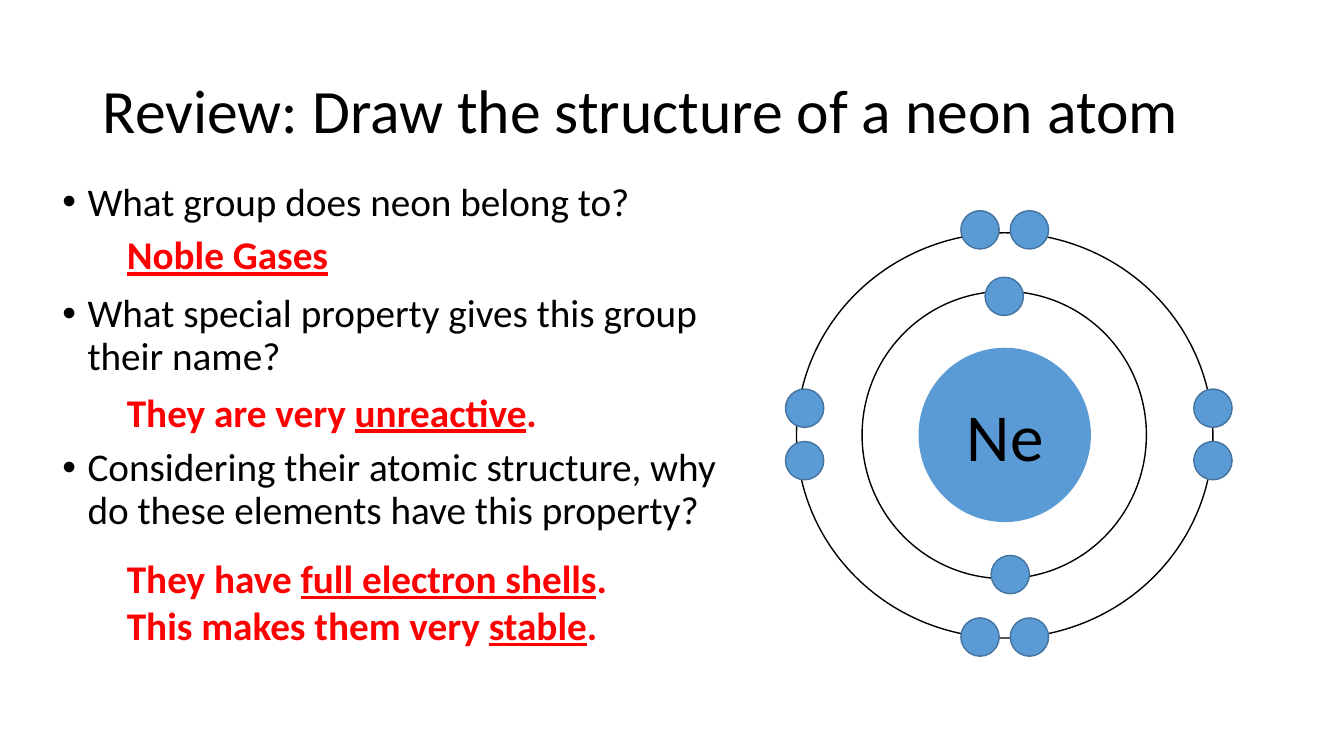
from itertools import product

from lxml.etree import SubElement
from pptx import Presentation
from pptx.dml.color import RGBColor
from pptx.enum.shapes import MSO_SHAPE
from pptx.enum.text import MSO_ANCHOR
from pptx.oxml.ns import qn
from pptx.util import Inches, Pt

BLACK = RGBColor(0x00, 0x00, 0x00)
RED = RGBColor(0xFF, 0x00, 0x00)
BLUE = RGBColor(0x5B, 0x9B, 0xD5)
DARK_BLUE = RGBColor(0x43, 0x73, 0x9E)

ELECTRON = 0.38
QUESTIONS = [
    "What group does neon belong to?",
    "What special property gives this group their name?",
    "Considering their atomic structure, why do these elements have this property?",
]
ANSWERS = [
    (2.24, 4.28, 0.57, "_Noble Gases_"),
    (3.8, 5.19, 0.57, "They are very _unreactive_."),
    (5.45, 5.19, 1.04, "They have _full electron shells_. This makes them very _stable_."),
]


def write(p, text, size=28, color=BLACK, bold=False, line=1.0, before=0, bullet=False):
    p.line_spacing = line
    p.space_before = Pt(before)
    if bullet:
        pPr = p._p.get_or_add_pPr()
        pPr.set("marL", str(Inches(0.25)))
        pPr.set("indent", str(-Inches(0.25)))
        SubElement(pPr, qn("a:buFont"), typeface="Arial")
        SubElement(pPr, qn("a:buChar"), char="•")
    for i, part in enumerate(text.split("_")):
        if part:
            r = p.add_run()
            r.text = part
            r.font.name = "Calibri"
            r.font.size = Pt(size)
            r.font.bold = bold
            r.font.underline = i % 2 == 1
            r.font.color.rgb = color


class AtomSlide:
    def __init__(self, prs):
        self.s = prs.slides.add_slide(prs.slide_layouts[6])

    def text_box(self, x, y, w, h, anchor=MSO_ANCHOR.TOP):
        sp = self.s.shapes.add_textbox(Inches(x), Inches(y), Inches(w), Inches(h))
        tf = sp.text_frame
        tf.word_wrap = True
        tf.vertical_anchor = anchor
        return tf

    def text(self, x, y, w, h, text, anchor=MSO_ANCHOR.TOP, **style):
        write(self.text_box(x, y, w, h, anchor).paragraphs[0], text, **style)

    def bullets(self, x, y, w, h, items, gap):
        tf = self.text_box(x, y, w, h)
        for i, item in enumerate(items):
            p = tf.add_paragraph() if i else tf.paragraphs[0]
            write(p, item, line=0.9, before=gap if i else 10, bullet=True)

    def ellipse(self, x, y, w, h, fill=None, line=None):
        sp = self.s.shapes.add_shape(
            MSO_SHAPE.OVAL, Inches(x), Inches(y), Inches(w), Inches(h))
        sp.shadow.inherit = False
        if fill is None:
            sp.fill.background()
        else:
            sp.fill.solid()
            sp.fill.fore_color.rgb = fill
        if line is None:
            sp.line.fill.background()
        else:
            sp.line.color.rgb = line
            sp.line.width = Pt(1)

    def electron(self, x, y):
        self.ellipse(x, y, ELECTRON, ELECTRON, BLUE, DARK_BLUE)


def main():
    prs = Presentation()
    prs.slide_width = Inches(13.33)
    prs.slide_height = Inches(7.5)
    slide = AtomSlide(prs)

    slide.text(0.92, 0.4, 11.5, 1.45, "Review: Draw the structure of a neon atom",
               anchor=MSO_ANCHOR.MIDDLE, size=44, line=0.9)
    slide.bullets(0.52, 1.76, 6.87, 4.76, QUESTIONS, gap=49.5)

    slide.ellipse(9.11, 3.45, 1.71, 1.73, fill=BLUE)
    slide.text(9.49, 3.86, 1.71, 0.91, "Ne", size=48)
    slide.ellipse(8.55, 2.89, 2.82, 2.85, line=BLACK)
    slide.ellipse(7.9, 2.31, 4.13, 4.02, line=BLACK)

    inner = [(9.77, 2.75), (9.83, 5.51)]
    top_and_bottom = product((9.53, 10.02), (2.09, 6.13))
    sides = product((7.79, 11.84), (3.86, 4.38))
    for x, y in [*inner, *top_and_bottom, *sides]:
        slide.electron(x, y)

    for y, w, h, answer in ANSWERS:
        slide.text(1.16, y, w, h, answer, color=RED, bold=True)

    prs.save("out.pptx")


if __name__ == "__main__":
    main()
